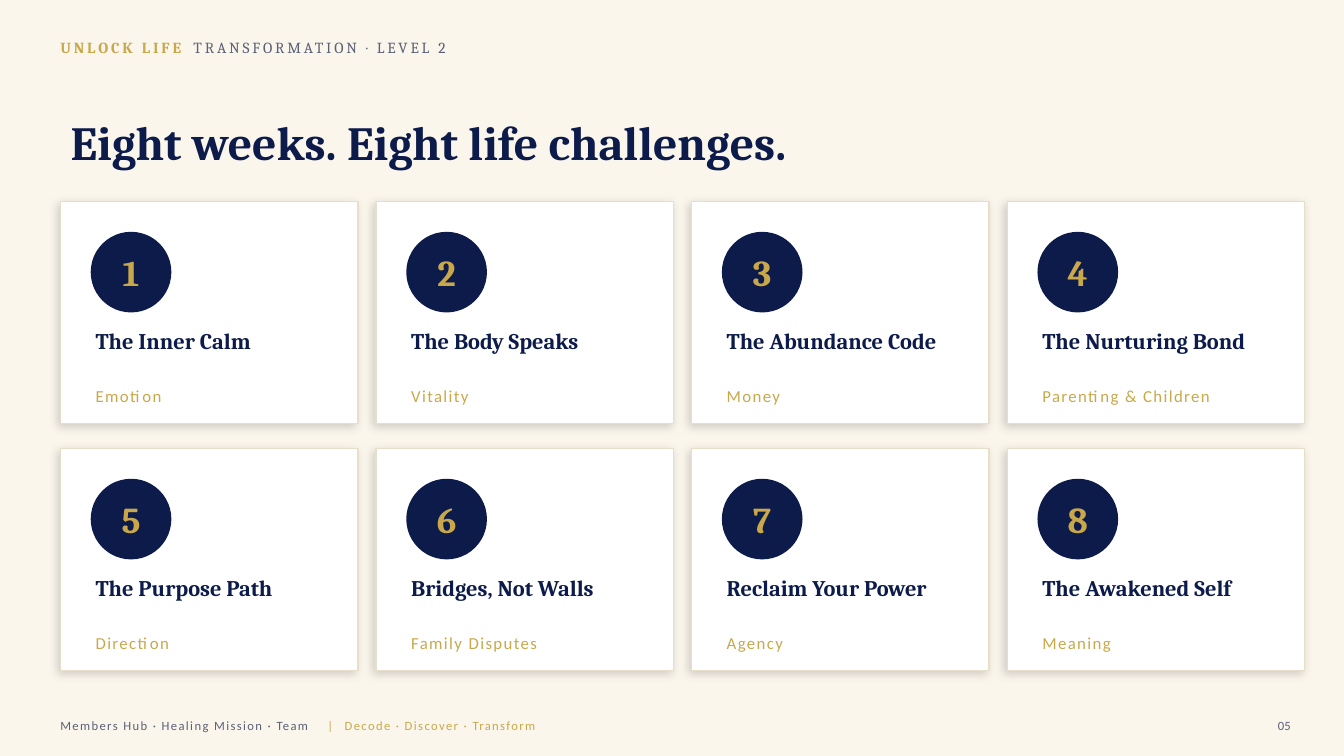
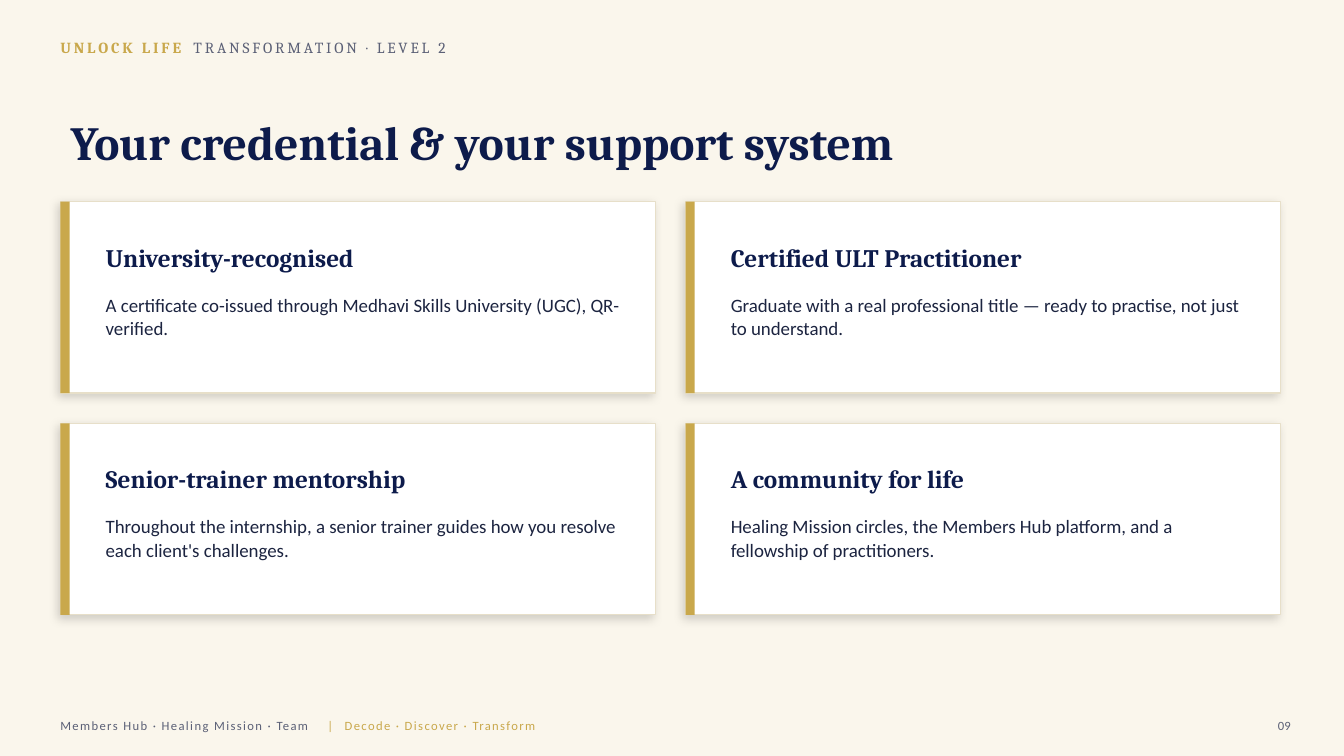
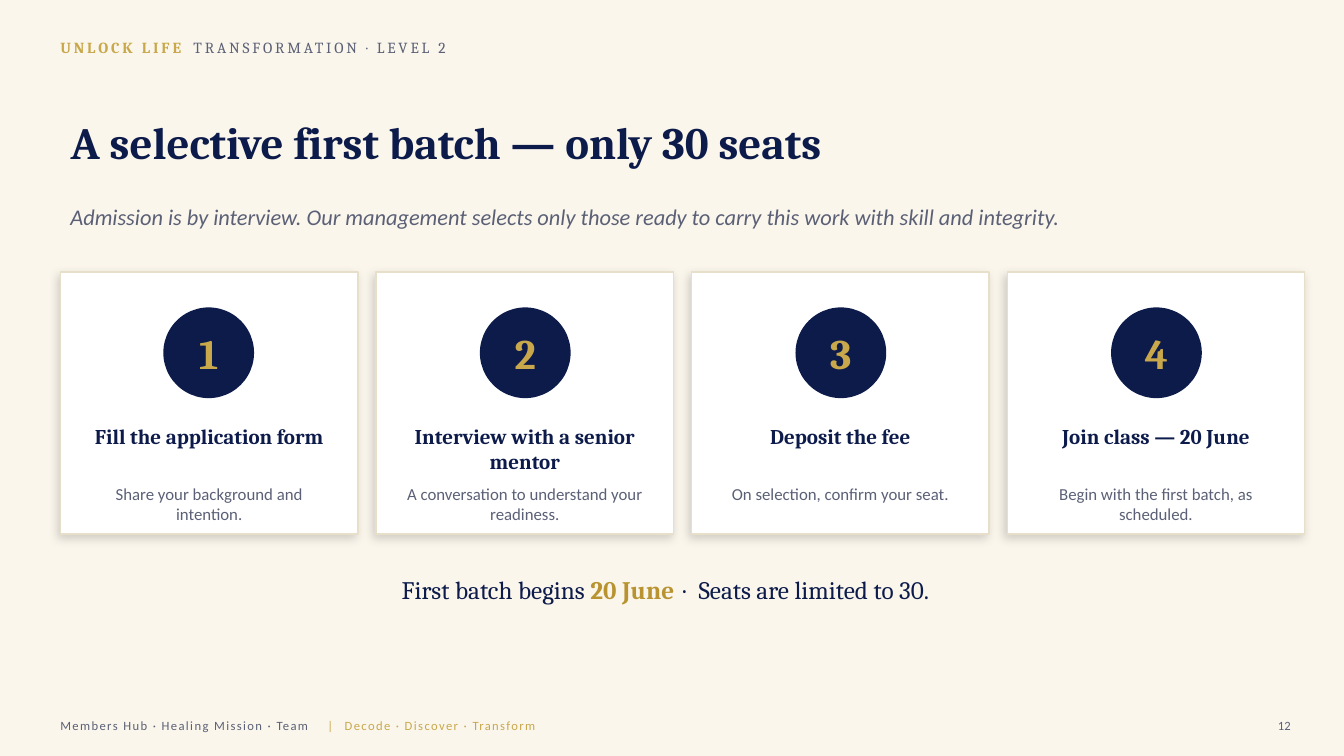
from dataclasses import dataclass, replace
from typing import NamedTuple, Optional

from lxml.etree import SubElement
from pptx import Presentation
from pptx.dml.color import RGBColor
from pptx.enum.shapes import MSO_SHAPE
from pptx.enum.text import MSO_ANCHOR, MSO_AUTO_SIZE, PP_ALIGN
from pptx.oxml.ns import qn
from pptx.util import Inches, Pt

NAVY, GOLD, DEEP_GOLD = "0D1B4B", "C9A84C", "B8932F"
GREY, INK, WHITE = "5B6076", "1C2440", "FFFFFF"
CREAM, BORDER = "FAF6EC", "E7DFC9"
SERIF, SANS = "Cambria", "Calibri"


class Area(NamedTuple):
    left: float
    top: float
    width: float
    height: float

    def inner(self, left: float, top: float, width: float, height: float) -> "Area":
        """Area placed relative to this one's top left corner."""
        return Area(self.left + left, self.top + top, width, height)


class Span(NamedTuple):
    text: str
    color: Optional[str] = None
    bold: Optional[bool] = None
    spacing: Optional[float] = None


class Card(NamedTuple):
    heading: str
    detail: str


@dataclass(frozen=True)
class Style:
    font: str
    size: float
    color: str
    bold: bool = False
    italic: bool = False
    spacing: float = 0
    align: PP_ALIGN = PP_ALIGN.LEFT
    anchor: MSO_ANCHOR = MSO_ANCHOR.MIDDLE
    line_spacing: Optional[float] = None
    tabs: tuple[float, ...] = ()


TITLE = Style(SERIF, 34, NAVY, bold=True)
KICKER = Style(SERIF, 11, GREY, spacing=2, tabs=(1.32,))
FOOTER = Style(SANS, 9, GREY, spacing=1, tabs=(2.65, 2.82))
PAGE_NUMBER = Style(SANS, 9, GREY, align=PP_ALIGN.RIGHT)
NUMBER = Style(SERIF, 26, GOLD, bold=True, align=PP_ALIGN.CENTER)
WEEK_NAME = Style(SERIF, 16, NAVY, bold=True, anchor=MSO_ANCHOR.TOP)
WEEK_THEME = Style(SANS, 12, GOLD, spacing=1)
BENEFIT_NAME = Style(SERIF, 18, NAVY, bold=True)
BENEFIT_TEXT = Style(SANS, 13.5, INK, anchor=MSO_ANCHOR.TOP, line_spacing=1.05)
LEAD = Style(SANS, 16, GREY, italic=True)
STEP_NAME = replace(WEEK_NAME, size=15, align=PP_ALIGN.CENTER)
STEP_TEXT = Style(SANS, 12, GREY, align=PP_ALIGN.CENTER, anchor=MSO_ANCHOR.TOP)
CLOSING = Style(SERIF, 18, NAVY, align=PP_ALIGN.CENTER)

WEEKS = [
    Card("The Inner Calm", "Emotion"),
    Card("The Body Speaks", "Vitality"),
    Card("The Abundance Code", "Money"),
    Card("The Nurturing Bond", "Parenting & Children"),
    Card("The Purpose Path", "Direction"),
    Card("Bridges, Not Walls", "Family Disputes"),
    Card("Reclaim Your Power", "Agency"),
    Card("The Awakened Self", "Meaning"),
]
BENEFITS = [
    Card("University-recognised",
         "A certificate co-issued through Medhavi Skills University (UGC), QR-verified."),
    Card("Certified ULT Practitioner",
         "Graduate with a real professional title — ready to practise, not just to understand."),
    Card("Senior-trainer mentorship",
         "Throughout the internship, a senior trainer guides how you resolve each client's challenges."),
    Card("A community for life",
         "Healing Mission circles, the Members Hub platform, and a fellowship of practitioners."),
]
STEPS = [
    Card("Fill the application form", "Share your background and intention."),
    Card("Interview with a senior mentor", "A conversation to understand your readiness."),
    Card("Deposit the fee", "On selection, confirm your seat."),
    Card("Join class — 20 June", "Begin with the first batch, as scheduled."),
]


def rgb(color: str) -> RGBColor:
    return RGBColor.from_string(color)


def lengths(area: Area) -> list:
    return [Inches(round(value, 2)) for value in area]


def grid(first: Area, columns: int, gap_x: float, gap_y: float, count: int) -> list[Area]:
    """Areas of equal size, filled row by row."""
    return [
        first._replace(left=first.left + index % columns * (first.width + gap_x),
                       top=first.top + index // columns * (first.height + gap_y))
        for index in range(count)
    ]


def write(frame, style: Style, *spans: Span) -> None:
    """Fill a text frame with one paragraph; spans override the style."""
    frame.word_wrap = True
    frame.auto_size = MSO_AUTO_SIZE.NONE
    frame.vertical_anchor = style.anchor
    para = frame.paragraphs[0]
    para.alignment = style.align
    if style.line_spacing:
        para.line_spacing = style.line_spacing
    properties = para._p.get_or_add_pPr()
    if style.tabs:
        tab_list = SubElement(properties, qn("a:tabLst"))
        for position in style.tabs:
            SubElement(tab_list, qn("a:tab"), pos=str(Inches(position)), algn="l")
    font = para.font
    font.name, font.size = style.font, Pt(style.size)
    font.bold, font.italic = style.bold, style.italic
    font.color.rgb = rgb(style.color)
    if style.spacing:
        properties.get_or_add_defRPr().set("spc", str(round(style.spacing * 100)))
    for span in spans:
        run = para.add_run()
        run.text = span.text
        if span.color:
            run.font.color.rgb = rgb(span.color)
        if span.bold is not None:
            run.font.bold = span.bold
        if span.spacing is not None:
            run._r.get_or_add_rPr().set("spc", str(round(span.spacing * 100)))


def add_text(page, area: Area, style: Style, *spans: Span) -> None:
    write(page.shapes.add_textbox(*lengths(area)).text_frame, style, *spans)


def add_plain_shape(page, kind: MSO_SHAPE, area: Area, fill: str):
    shape = page.shapes.add_shape(kind, *lengths(area))
    shape.shadow.inherit = False
    shape.fill.solid()
    shape.fill.fore_color.rgb = rgb(fill)
    shape.line.fill.background()
    return shape


def add_panel(page, area: Area) -> None:
    """White card with a thin border and a soft shadow."""
    panel = add_plain_shape(page, MSO_SHAPE.RECTANGLE, area, WHITE)
    panel.line.color.rgb = rgb(BORDER)
    panel.line.width = Pt(1)
    effects = panel._element.spPr.find(qn("a:effectLst"))
    shadow = SubElement(effects, qn("a:outerShdw"), blurRad=str(Pt(7)), dist=str(Pt(3)),
                        dir=str(135 * 60000), algn="bl", rotWithShape="0")
    color = SubElement(shadow, qn("a:srgbClr"), val="000000")
    SubElement(color, qn("a:alpha"), val="16000")


def add_number(page, area: Area, number: int, style: Style) -> None:
    circle = add_plain_shape(page, MSO_SHAPE.OVAL, area, NAVY)
    write(circle.text_frame, style, Span(str(number)))


def add_page(deck, title: str, number: str, style: Style = TITLE):
    page = deck.slides.add_slide(deck.slide_layouts.get_by_name("Title Only"))
    write(page.shapes.title.text_frame, style, Span(title))
    add_text(page, Area(0.5, 0.32, 8, 0.3), KICKER,
             Span("UNLOCK LIFE", GOLD, True), Span("\tTRANSFORMATION · LEVEL 2"))
    add_text(page, Area(0.5, 7.05, 11.5, 0.3), FOOTER,
             Span("Members Hub · Healing Mission · Team"),
             Span("\t|\tDecode · Discover · Transform", GOLD))
    add_text(page, Area(12.4, 7.05, 0.5, 0.3), PAGE_NUMBER, Span(number))
    return page


def add_weeks_page(deck) -> None:
    page = add_page(deck, "Eight weeks. Eight life challenges.", "05")
    areas = grid(Area(0.6, 2, 2.95, 2.2), 4, 0.18, 0.25, len(WEEKS))
    for number, (area, week) in enumerate(zip(areas, WEEKS), 1):
        add_panel(page, area)
        add_number(page, area.inner(0.3, 0.3, 0.8, 0.8), number, NUMBER)
        add_text(page, area.inner(0.25, 1.2, 2.5, 0.6), WEEK_NAME, Span(week.heading))
        add_text(page, area.inner(0.25, 1.75, 2.5, 0.35), WEEK_THEME, Span(week.detail))


def add_benefits_page(deck) -> None:
    page = add_page(deck, "Your credential & your support system", "09")
    areas = grid(Area(0.6, 2, 5.9, 1.9), 2, 0.3, 0.3, len(BENEFITS))
    for area, benefit in zip(areas, BENEFITS):
        add_panel(page, area)
        add_plain_shape(page, MSO_SHAPE.RECTANGLE, area._replace(width=0.09), GOLD)
        add_text(page, area.inner(0.35, 0.3, 5.3, 0.5), BENEFIT_NAME, Span(benefit.heading))
        add_text(page, area.inner(0.35, 0.85, 5.3, 0.9), BENEFIT_TEXT, Span(benefit.detail))


def add_steps_page(deck) -> None:
    page = add_page(deck, "A selective first batch — only 30 seats", "12",
                    replace(TITLE, size=32))
    add_text(page, Area(0.6, 1.85, 12, 0.6), LEAD,
             Span("Admission is by interview. Our management selects only those ready "
                  "to carry this work with skill and integrity."))
    areas = grid(Area(0.6, 2.7, 2.95, 2.6), 4, 0.18, 0, len(STEPS))
    for number, (area, step) in enumerate(zip(areas, STEPS), 1):
        add_panel(page, area)
        add_number(page, area.inner((area.width - 0.9) / 2, 0.35, 0.9, 0.9), number,
                   replace(NUMBER, size=30))
        add_text(page, area.inner(0.2, 1.45, 2.55, 0.7), STEP_NAME, Span(step.heading))
        add_text(page, area.inner(0.2, 2.05, 2.55, 0.5), STEP_TEXT, Span(step.detail))
    add_text(page, Area(0.6, 5.6, 12, 0.5), CLOSING,
             Span("First batch begins "), Span("20 June", DEEP_GOLD, True),
             Span(" · ", spacing=2.5), Span("Seats are limited to 30."))


def main() -> None:
    deck = Presentation()
    deck.slide_width, deck.slide_height = Inches(13.33), Inches(7.5)
    background = deck.slide_master.background.fill
    background.solid()
    background.fore_color.rgb = rgb(CREAM)
    title = deck.slide_layouts.get_by_name("Title Only").placeholders[0]
    title.left, title.top, title.width, title.height = lengths(Area(0.6, 1, 12, 0.8))
    add_weeks_page(deck)
    add_benefits_page(deck)
    add_steps_page(deck)
    deck.save("out.pptx")


if __name__ == "__main__":
    main()
